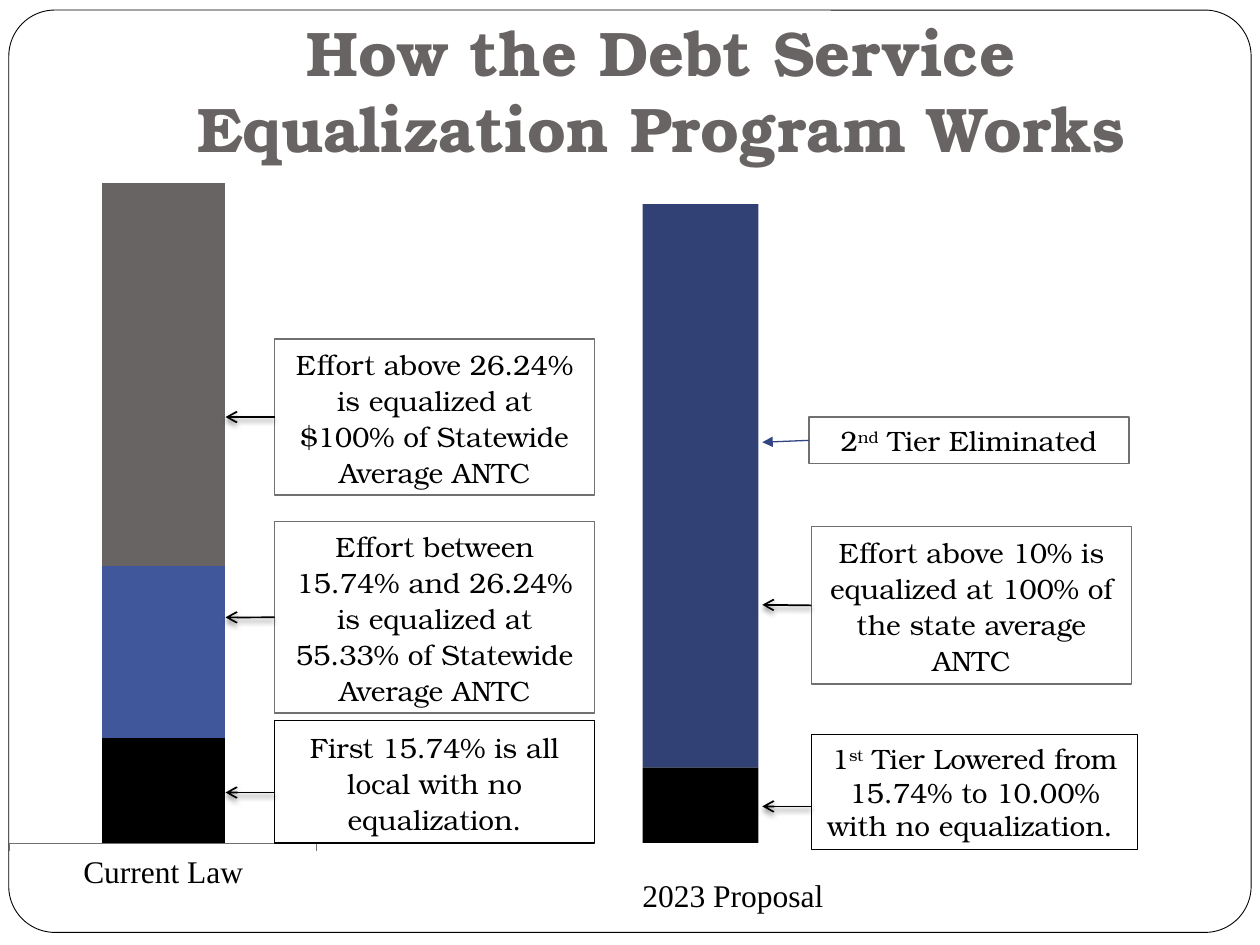
from lxml import etree
from pptx import Presentation
from pptx.chart.data import CategoryChartData
from pptx.dml.color import RGBColor
from pptx.enum.chart import XL_CHART_TYPE, XL_TICK_LABEL_POSITION, XL_TICK_MARK
from pptx.enum.shapes import MSO_CONNECTOR, MSO_SHAPE
from pptx.enum.text import MSO_ANCHOR, MSO_AUTO_SIZE, PP_ALIGN
from pptx.oxml import parse_xml
from pptx.oxml.ns import nsdecls, qn
from pptx.util import Inches, Pt

RECT, ROUND = MSO_SHAPE.RECTANGLE, MSO_SHAPE.ROUNDED_RECTANGLE
STRAIGHT = MSO_CONNECTOR.STRAIGHT
STACKED = XL_CHART_TYPE.COLUMN_STACKED_100
LOW, TICK_OUT, TICK_NONE = XL_TICK_LABEL_POSITION.LOW, XL_TICK_MARK.OUTSIDE, XL_TICK_MARK.NONE
CENTER, BOTTOM, MIDDLE = PP_ALIGN.CENTER, MSO_ANCHOR.BOTTOM, MSO_ANCHOR.MIDDLE
GROW, NO_FIT = MSO_AUTO_SIZE.SHAPE_TO_FIT_TEXT, MSO_AUTO_SIZE.NONE

BLACK = RGBColor(0x00, 0x00, 0x00)
WHITE = RGBColor(0xFF, 0xFF, 0xFF)
GRAY = RGBColor(0x69, 0x64, 0x64)
BORDER = RGBColor(0x70, 0x70, 0x70)
BLUE = RGBColor(0x41, 0x57, 0x9C)
NAVY = RGBColor(0x31, 0x41, 0x75)
ARROW_NAVY = RGBColor(0x30, 0x44, 0x81)
SERIF, LABEL = "TeX Gyre Bonum", "Times New Roman"

SHADOW = (
    f'<a:effectLst {nsdecls("a")}><a:outerShdw blurRad="38100" dist="25400" dir="5400000" '
    'rotWithShape="0"><a:srgbClr val="000000"><a:alpha val="50000"/></a:srgbClr>'
    "</a:outerShdw></a:effectLst>"
)
NO_EFFECT = f'<a:effectLst {nsdecls("a")}/>'


def style_font(font, name, size, color, bold=False):
    font.name, font.size, font.bold = name, Pt(size), bold
    font.color.rgb = color


def add_box(s, box, fill=None, line=None, width=0.75, kind=RECT):
    sp = s.shapes.add_shape(kind, *map(Inches, box))
    sp.shadow.inherit = False
    if fill is None:
        sp.fill.background()
    else:
        sp.fill.solid()
        sp.fill.fore_color.rgb = fill
    if line is None:
        sp.line.fill.background()
    else:
        sp.line.color.rgb = line
        sp.line.width = Pt(width)
    return sp


def add_frame(s, box):
    sp = add_box(s, box, WHITE, BLACK, 0.5, ROUND)
    sp.adjustments[0] = 0.05
    s.shapes._spTree.insert(2, sp._element)


def add_title(s, box):
    sp = s.shapes.title
    sp.left, sp.top, sp.width, sp.height = map(Inches, box)
    tf = sp.text_frame
    tf.text = "How the Debt Service Equalization Program Works"
    tf.word_wrap, tf.auto_size, tf.vertical_anchor = True, NO_FIT, BOTTOM
    tf.margin_left = tf.margin_right = tf.margin_bottom = Inches(0.1)
    tf.margin_top = Inches(0.05)
    p = tf.paragraphs[0]
    p.alignment, p.line_spacing = CENTER, 1.0
    p.space_before = Pt(0)
    style_font(p.runs[0].font, SERIF, 36, GRAY, True)


def add_current_law_chart(s, box):
    tiers = [("Series 1", 16, BLACK), ("Series 2", 26, BLUE), ("Series 3", 58, GRAY)]
    data = CategoryChartData()
    data.categories = ["Current Law"]
    for name, value, _ in tiers:
        data.add_series(name, [value])
    chart = s.shapes.add_chart(STACKED, *map(Inches, box), data).chart
    chart.has_legend = chart.has_title = False
    style_font(chart.font, LABEL, 18, BLACK)
    plot = chart.plots[0]
    plot.gap_width, plot.overlap, plot.vary_by_categories = 150, 100, False
    for series, (_, _, color) in zip(plot.series, tiers):
        series.format.fill.solid()
        series.format.fill.fore_color.rgb = color
    axis = chart.category_axis
    axis.major_tick_mark, axis.minor_tick_mark = TICK_OUT, TICK_NONE
    axis.tick_label_position = LOW
    axis.format.line.color.rgb = BORDER
    chart.value_axis.has_major_gridlines = False
    chart.value_axis.maximum_scale = 1
    chart.value_axis.visible = False

    area = chart._chartSpace.chart.plotArea
    for old in area.findall(qn("c:layout")):
        area.remove(old)
    layout = etree.Element(qn("c:layout"))
    manual = etree.SubElement(layout, qn("c:manualLayout"))
    for tag, value in [("layoutTarget", "inner"), ("xMode", "edge"), ("yMode", "edge"),
                       ("x", "0.03"), ("y", "0.06"), ("w", "0.97"), ("h", "0.85")]:
        etree.SubElement(manual, qn(f"c:{tag}")).set("val", value)
    area.insert(0, layout)


def add_proposal_bar(s, box, local_height):
    left, top, width, height = box
    add_box(s, (left, top + height - local_height, width, local_height), BLACK)
    add_box(s, (left, top, width, height - local_height), NAVY)


def add_proposal_label(s, box):
    tf = s.shapes.add_textbox(*map(Inches, box)).text_frame
    tf.text = "2023 Proposal"
    tf.word_wrap, tf.auto_size = True, GROW
    style_font(tf.paragraphs[0].runs[0].font, LABEL, 18, BLACK)


def add_note(s, box, parts, line, spaced):
    sp = add_box(s, box, WHITE, line)
    tf = sp.text_frame
    tf.word_wrap, tf.auto_size, tf.vertical_anchor = True, GROW, MIDDLE
    p = tf.paragraphs[0]
    p.alignment = CENTER
    if spaced:
        p.line_spacing, p.space_after = 1.07, Pt(8)
    for i, part in enumerate(parts):
        r = p.add_run()
        r.text = part
        style_font(r.font, SERIF, 16, BLACK)
        if i == 1:
            r.font._element.set("baseline", "30000")
    return sp


def add_arrow(s, note, y, length=0.39, color=BLACK, width=1, head="arrow", effect=SHADOW):
    start = note.left
    middle = note.top + note.height // 2
    c = s.shapes.add_connector(STRAIGHT, start, Inches(y), start - Inches(length), Inches(y))
    if abs(middle - Inches(y)) < Inches(0.03):
        c.begin_connect(note, 1)
    c.line.color.rgb = color
    c.line.width = Pt(width)
    etree.SubElement(c.line._get_or_add_ln(), qn("a:tailEnd")).set("type", head)
    c._element.spPr.append(parse_xml(effect))


def add_current_law_notes(s, left, width):
    notes = [
        (2.69, 1.24, 3.31, BORDER,
         "Effort above 26.24% is equalized at $100% of Statewide Average ANTC"),
        (4.14, 1.52, 4.9, BORDER,
         "Effort between 15.74% and 26.24% is equalized at 55.33% of Statewide Average ANTC"),
        (5.72, 0.97, 6.29, BLACK, "First 15.74% is all local with no equalization."),
    ]
    for top, height, arrow_y, line, text in notes:
        note = add_note(s, (left, top, width, height), [text], line, True)
        add_arrow(s, note, arrow_y)


def add_proposal_notes(s, left, width):
    note = add_note(s, (left, 3.31, width, 0.37), ["2", "nd", " Tier Eliminated"], BORDER, False)
    add_arrow(s, note, 3.51, 0.37, ARROW_NAVY, 0.75, "triangle", NO_EFFECT)
    note = add_note(s, (left + 0.02, 4.18, width, 1.25),
                    ["Effort above 10% is equalized at 100% of the state average ANTC"], BORDER, True)
    add_arrow(s, note, 4.8)
    note = add_note(s, (left + 0.02, 5.83, width + 0.05, 0.91),
                    ["1", "st", " Tier Lowered from 15.74% to 10.00% with no equalization. "],
                    BLACK, False)
    add_arrow(s, note, 6.4)


def main():
    prs = Presentation()
    prs.slide_width, prs.slide_height = Inches(10), Inches(7.5)
    s = prs.slides.add_slide(prs.slide_layouts[5])
    add_frame(s, (0.07, 0.08, 9.86, 7.32))
    add_title(s, (1, 0.28, 8.5, 1.13))
    add_current_law_chart(s, (0, 1.08, 2.52, 6.17))
    add_current_law_notes(s, 2.18, 2.54)
    add_proposal_bar(s, (5.1, 1.62, 0.92, 5.07), 0.6)
    add_proposal_label(s, (5, 6.9, 1.69, 0.4))
    add_proposal_notes(s, 6.42, 2.54)
    prs.save("out.pptx")


if __name__ == "__main__":
    main()
